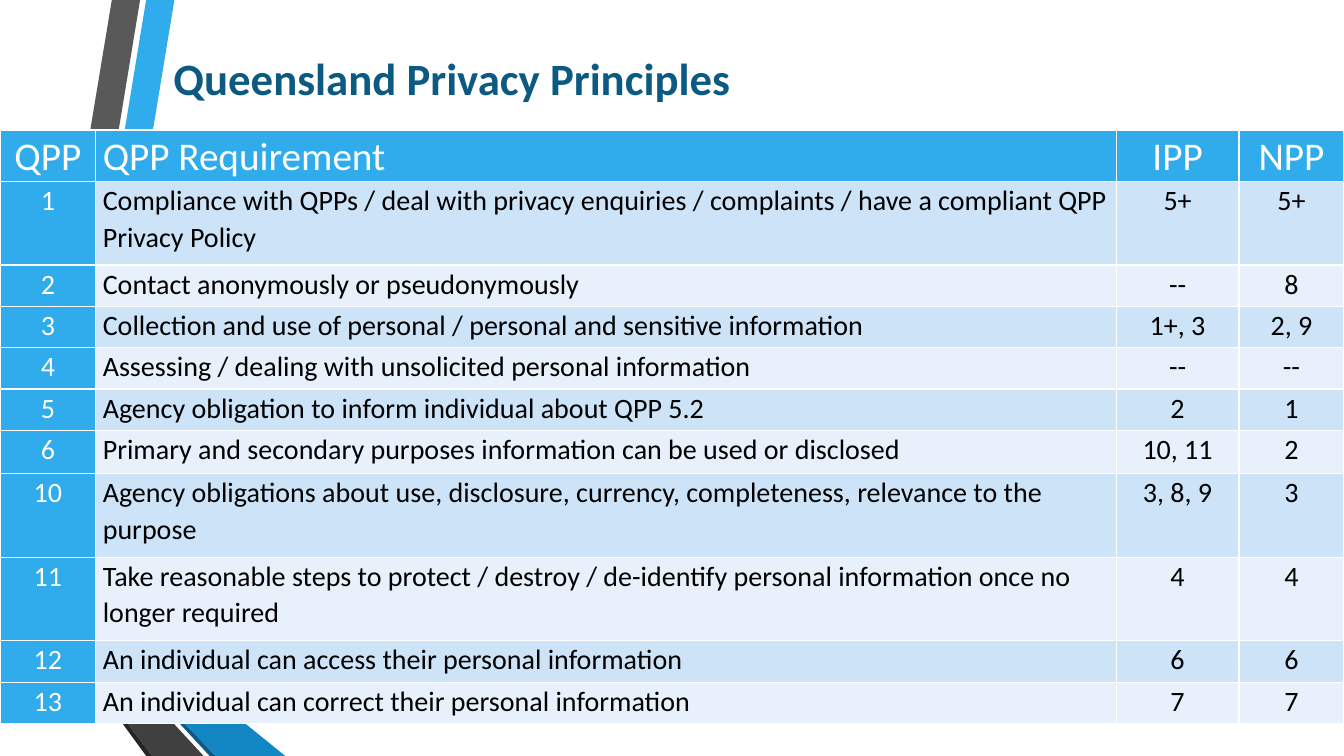
from dataclasses import dataclass

from lxml import etree
from pptx import Presentation
from pptx.dml.color import RGBColor
from pptx.enum.text import MSO_ANCHOR, PP_ALIGN
from pptx.oxml.ns import qn
from pptx.util import Inches, Pt

LEFT, CENTER = PP_ALIGN.LEFT, PP_ALIGN.CENTER
TOP, MIDDLE = MSO_ANCHOR.TOP, MSO_ANCHOR.MIDDLE
TITLE_ONLY = 5


@dataclass(frozen=True)
class Theme:
    font: str = "Calibri"
    blue: str = "30ACEC"
    fold_blue: str = "1287C3"
    navy: str = "0C5A82"
    grey: str = "595959"
    fold_grey: str = "404040"
    edge_grey: str = "262626"
    band_dark: str = "CDE3F8"
    band_light: str = "E8F1FB"
    white: str = "FFFFFF"
    black: str = "000000"
    title_size: int = 32
    header_size: int = 28
    body_size: int = 20
    border: float = 1


THEME = Theme()

# Fill and outline of each ribbon part, in inches from the ribbon's corner
RIBBON = [
    (THEME.blue, [(0.34, 5.78), (0.61, 5.83), (1.57, 0), (1.29, 0)]),
    (THEME.grey, [(1.23, 0), (0.95, 0), (0, 5.73), (0.28, 5.77)]),
    (THEME.edge_grey, [(0, 5.73), (1.29, 7.5), (1.35, 7.5)]),
    (THEME.navy, [(0.34, 5.79), (1.92, 7.5), (1.98, 7.5)]),
    (THEME.fold_blue, [(0.34, 5.79), (1.98, 7.5), (2.67, 7.5), (0.61, 5.83), (0.34, 5.78)]),
    (THEME.fold_grey, [(1.86, 7.5), (0.32, 5.83), (0.28, 5.77), (0, 5.73), (1.35, 7.5)]),
]

PRINCIPLES = [
    ("QPP", "QPP Requirement", "IPP", "NPP"),
    ("1", "Compliance with QPPs / deal with privacy enquiries / complaints / "
          "have a compliant QPP Privacy Policy", "5+", "5+"),
    ("2", "Contact anonymously or pseudonymously", "--", "8"),
    ("3", "Collection and use of personal / personal and sensitive information", "1+, 3", "2, 9"),
    ("4", "Assessing / dealing with unsolicited personal information", "--", "--"),
    ("5", "Agency obligation to inform individual about QPP 5.2", "2", "1"),
    ("6", "Primary and secondary purposes information can be used or disclosed", "10, 11", "2"),
    ("10", "Agency obligations about use, disclosure, currency, completeness, "
           "relevance to the purpose", "3, 8, 9", "3"),
    ("11", "Take reasonable steps to protect / destroy / de-identify personal "
           "information once no longer required", "4", "4"),
    ("12", "An individual can access their personal information", "6", "6"),
    ("13", "An individual can correct their personal information", "7", "7"),
]
COLUMN_WIDTHS = [0.95, 10.12, 1.22, 1.04]
ROW_HEIGHTS = [0.41, 0.83, 0.41, 0.41, 0.41, 0.41, 0.43, 0.83, 0.83, 0.41, 0.41]
REQUIREMENT_COLUMN = 1


def add_run(p, text, size, color, bold=False):
    r = p.add_run()
    r.text = text
    r.font.name = THEME.font
    r.font.size = Pt(size)
    r.font.bold = bold
    r.font.color.rgb = RGBColor.from_string(color)


def add_ribbon(slide, left, top):
    group = slide.shapes.add_group_shape()
    for color, outline in RIBBON:
        points = [(Inches(left + x), Inches(top + y)) for x, y in outline]
        builder = group.shapes.build_freeform(*points[0])
        builder.add_line_segments(points[1:], close=True)
        sp = builder.convert_to_shape()
        sp.fill.solid()
        sp.fill.fore_color.rgb = RGBColor.from_string(color)
        sp.line.fill.background()
        sp.shadow.inherit = False


def place_title(slide, text, left, top, width, height):
    """Fill the title placeholder and bring it in front of the ribbon."""
    title = slide.shapes.title
    title.left, title.top = Inches(left), Inches(top)
    title.width, title.height = Inches(width), Inches(height)
    tf = title.text_frame
    tf.word_wrap = True
    tf.vertical_anchor = MIDDLE
    p = tf.paragraphs[0]
    p.alignment = LEFT
    add_run(p, text, THEME.title_size, THEME.navy, bold=True)
    title.element.getparent().append(title.element)


def add_borders(cell):
    tc_pr = cell._tc.get_or_add_tcPr()
    for side in ("a:lnL", "a:lnR", "a:lnT", "a:lnB"):
        line = etree.SubElement(tc_pr, qn(side), w=str(Pt(THEME.border)))
        fill = etree.SubElement(line, qn("a:solidFill"))
        etree.SubElement(fill, qn("a:srgbClr"), val=THEME.white)


def format_cell(cell, text, size, color, fill, align):
    add_borders(cell)
    cell.fill.solid()
    cell.fill.fore_color.rgb = RGBColor.from_string(fill)
    cell.margin_left = cell.margin_right = Inches(0.07)
    cell.margin_top = cell.margin_bottom = 0
    cell.vertical_anchor = TOP
    p = cell.text_frame.paragraphs[0]
    p.alignment = align
    p.line_spacing = 1.07
    p.space_after = Pt(8)
    add_run(p, text, size, color)


def add_principles_table(slide, left, top, width, height):
    frame = slide.shapes.add_table(len(PRINCIPLES), len(COLUMN_WIDTHS), Inches(left),
                                   Inches(top), Inches(width), Inches(height))
    table = frame.table
    for column, column_width in zip(table.columns, COLUMN_WIDTHS):
        column.width = Inches(column_width)
    for row, row_height in zip(table.rows, ROW_HEIGHTS):
        row.height = Inches(row_height)
    for i, principle in enumerate(PRINCIPLES):
        size = THEME.body_size if i else THEME.header_size
        band = THEME.band_dark if i % 2 else THEME.band_light
        for j, text in enumerate(principle):
            heading = i == 0 or j == 0
            format_cell(table.cell(i, j), text, size,
                        color=THEME.white if heading else THEME.black,
                        fill=THEME.blue if heading else band,
                        align=LEFT if j == REQUIREMENT_COLUMN else CENTER)


def main():
    prs = Presentation()
    prs.slide_width, prs.slide_height = Inches(13.33), Inches(7.5)
    slide = prs.slides.add_slide(prs.slide_layouts[TITLE_ONLY])
    add_ribbon(slide, 0.16, 0)
    place_title(slide, "Queensland Privacy Principles", 1.62, 0.36, 7.3, 0.83)
    add_principles_table(slide, 0, 1.29, sum(COLUMN_WIDTHS), sum(ROW_HEIGHTS))
    prs.save("out.pptx")


if __name__ == "__main__":
    main()
